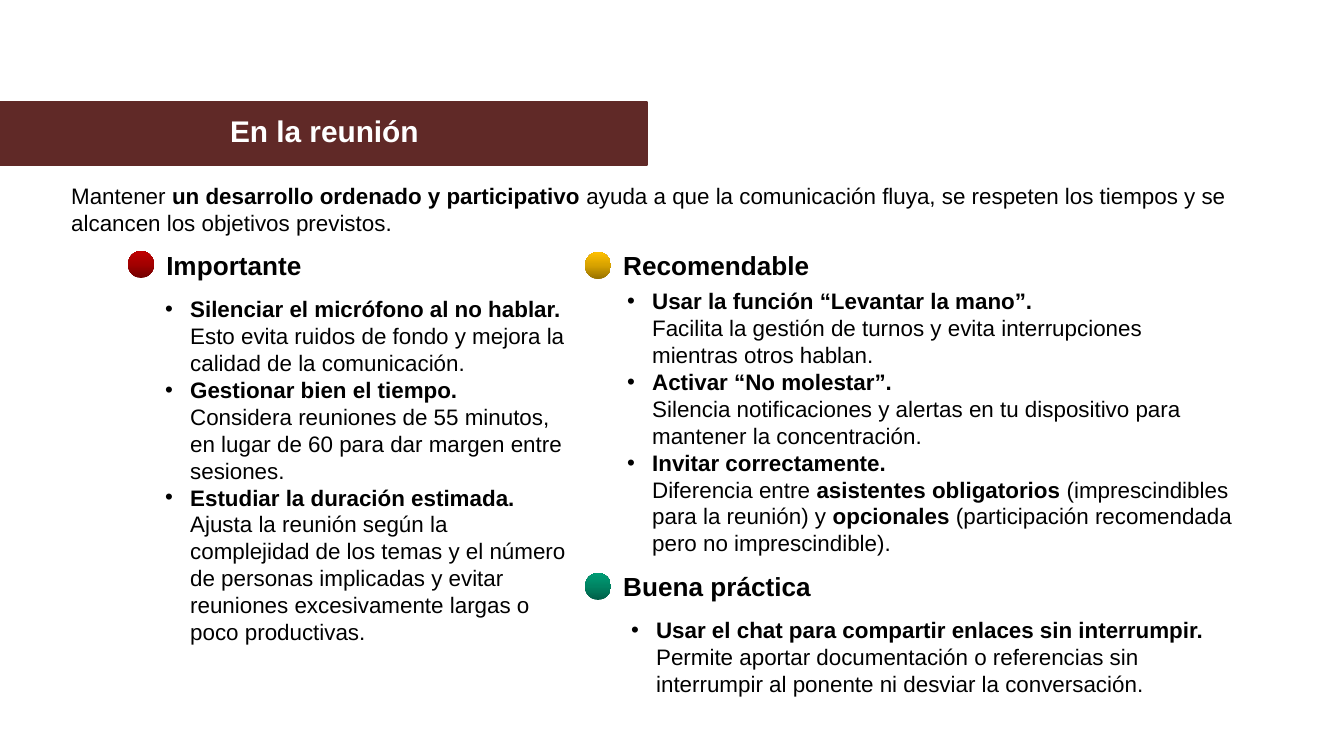
import copy

import lxml.etree
import pptx
import pptx.dml.color
import pptx.enum.shapes
import pptx.enum.text
import pptx.oxml.ns
import pptx.util

SCALE = 9144000 / 1344
qn = pptx.oxml.ns.qn
rgb = pptx.dml.color.RGBColor.from_string


def px(*lengths):
    return [pptx.util.Emu(round(length * SCALE)) for length in lengths]


def write(box, paragraphs, size=12, color="000000", bulleted=False, align="LEFT"):
    frame = box.text_frame
    frame_format = {
        "word_wrap": True,
        "auto_size": pptx.enum.text.MSO_AUTO_SIZE.SHAPE_TO_FIT_TEXT,
        "vertical_anchor": pptx.enum.text.MSO_ANCHOR.TOP,
    }
    for key, value in frame_format.items():
        setattr(frame, key, value)
    for index, pieces in enumerate(paragraphs):
        paragraph = frame.add_paragraph() if index else frame.paragraphs[0]
        paragraph.alignment = getattr(pptx.enum.text.PP_ALIGN, align)
        if bulleted:
            properties = paragraph._p.get_or_add_pPr()
            properties.set("marL", str(px(25)[0]))
            properties.set("indent", str(px(-25)[0]))
            bullet_color = lxml.etree.SubElement(properties, qn("a:buClr"))
            lxml.etree.SubElement(bullet_color, qn("a:srgbClr"), val=color)
            lxml.etree.SubElement(properties, qn("a:buFont"), typeface="Arial")
            lxml.etree.SubElement(properties, qn("a:buChar"), char="•")
        for text, bold in pieces:
            run = paragraph.add_run()
            run.text = text.rstrip("\n")
            run_format = {"name": "Arial", "size": pptx.util.Pt(size), "bold": bold}
            for key, value in run_format.items():
                setattr(run.font, key, value)
            run.font.color.rgb = rgb(color)
            if text.endswith("\n"):
                paragraph.add_line_break()
                line_break = paragraph._p[-1]
                line_break.append(copy.deepcopy(run._r.rPr))


presentation = pptx.Presentation()
presentation.slide_width, presentation.slide_height = px(1344, 756)
slide = presentation.slides.add_slide(presentation.slide_layouts[6])
shapes = slide.shapes
kinds = pptx.enum.shapes.MSO_SHAPE

band = shapes.add_shape(kinds.RECTANGLE, *px(0, 102, 647, 63))
band.shadow.inherit = False
band.fill.solid()
band.fill.fore_color.rgb = rgb("602927")
band.line.color.rgb = rgb("602927")
band.line.width = pptx.util.Pt(0.75)

title = shapes.add_textbox(*px(8, 106, 633, 50))
write(title, [[("En la reunión", True)]], size=16, color="FFFFFF", align="CENTER")

intro = shapes.add_textbox(*px(58, 176, 1250, 67))
write(intro, [[
    ("Mantener ", False),
    ("un desarrollo ordenado y participativo ", True),
    ("ayuda a que la comunicación fluya, se respeten los tiempos y se alcancen los objetivos previstos.", False),
]])

sections = [
    ("Importante", (153, 243, 344, 46), (128, 251), ("720000", "A20000", "C00000"),
     (152, 289, 434, 367), [
        [("Silenciar el micrófono al no hablar.\n", True),
         ("Esto evita ruidos de fondo y mejora la calidad de la comunicación.", False)],
        [("Gestionar bien el tiempo.\n", True),
         ("Considera reuniones de 55 minutos, en lugar de 60 para dar margen entre sesiones.", False)],
        [("Estudiar la duración estimada.\n", True),
         ("Ajusta la reunión según la complejidad de los temas y el número de personas implicadas "
          "y evitar reuniones excesivamente largas o poco productivas.", False)],
     ]),
    ("Recomendable", (610, 243, 396, 46), (585, 252), ("977200", "D7A200", "FFC000"),
     (614, 281, 634, 285), [
        [("Usar la función “Levantar la mano”.\n", True),
         ("Facilita la gestión de turnos y evita interrupciones mientras otros hablan.", False)],
        [("Activar “No molestar”.\n", True),
         ("Silencia notificaciones y alertas en tu dispositivo para mantener la concentración.", False)],
        [("Invitar correctamente.\n", True),
         ("Diferencia entre ", False),
         ("asistentes obligatorios", True),
         (" (imprescindibles para la reunión) y ", False),
         ("opcionales", True),
         (" (participación recomendada pero no imprescindible).", False)],
     ]),
    ("Buena práctica", (610, 564, 355, 46), (585, 573), ("005D46", "008463", "009D75"),
     (618, 610, 634, 95), [
        [("Usar el chat para compartir enlaces sin interrumpir. ", True),
         ("Permite aportar documentación o referencias sin interrumpir al ponente "
          "ni desviar la conversación.", False)],
     ]),
]

for heading, heading_place, light_corner, light_colors, advice_place, advice in sections:
    heading_box = shapes.add_textbox(*px(*heading_place))
    write(heading_box, [[(heading, True)]], size=14)

    advice_box = shapes.add_textbox(*px(*advice_place))
    write(advice_box, advice, bulleted=True)

    light = shapes.add_shape(kinds.FLOWCHART_CONNECTOR, *px(*light_corner, 26, 27))
    light.shadow.inherit = False
    light.line.fill.background()
    light.fill.gradient()
    light.fill.gradient_angle = 90
    stop_list = light._element.spPr.find(".//" + qn("a:gsLst"))
    stop_list.insert(1, copy.deepcopy(stop_list[0]))
    for stop, position, color in zip(light.fill.gradient_stops, (0, 0.5, 1), light_colors):
        stop.position = position
        stop.color.rgb = rgb(color)

presentation.save("out.pptx")
